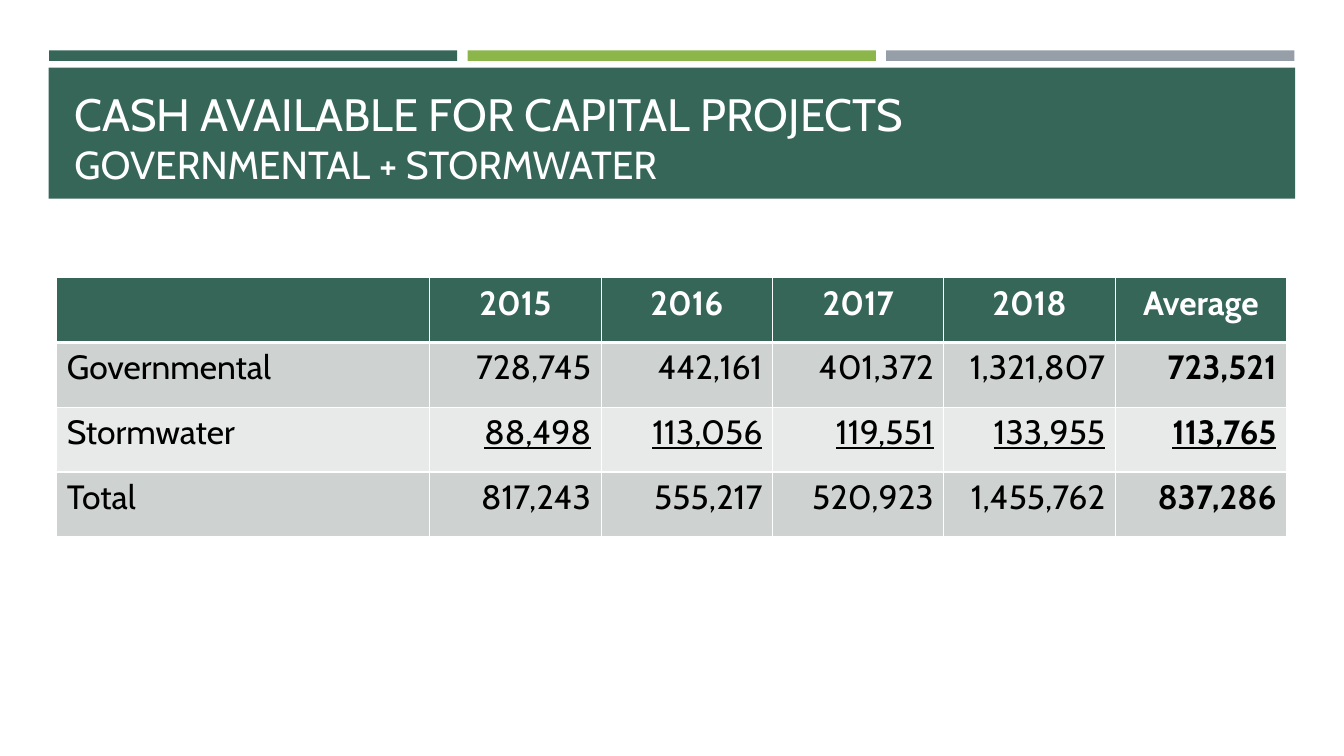
"""Build the slide on cash available for capital projects."""
from lxml import etree
from pptx import Presentation
from pptx.dml.color import RGBColor
from pptx.enum import shapes, text
from pptx.oxml import ns
from pptx.util import Pt

GREEN, LIME, GRAY, WHITE, BLACK = "366658", "8CB64A", "969FA7", "FFFFFF", "000000"
ROW_FILLS = [GREEN, "CED3D1", "E8EAEA", "CED3D1"]
ROWS = [
    ["", "2015", "2016", "2017", "2018", "Average"],
    ["Governmental", "728,745", "442,161", "401,372", "1,321,807", "723,521"],
    ["Stormwater", "88,498", "113,056", "119,551", "133,955", "113,765"],
    ["Total", "817,243", "555,217", "520,923", "1,455,762", "837,286"],
]


def paint(fill, color):
    fill.solid()
    fill.fore_color.rgb = RGBColor.from_string(color)


def add_border(cell, side, width):
    properties = cell._tc.get_or_add_tcPr()
    line = etree.SubElement(properties, ns.qn(f"a:ln{side}"), w=str(Pt(width)))
    solid = etree.SubElement(line, ns.qn("a:solidFill"))
    etree.SubElement(solid, ns.qn("a:srgbClr"), val=WHITE)


deck = Presentation()
deck.slide_width, deck.slide_height = Pt(960), Pt(540)
page = deck.slides.add_slide(deck.slide_layouts[5])

bars = [(35 + 299 * i, 36, 291.6, 7.5, color) for i, color in enumerate([GREEN, LIME, GRAY])]
title_band = (34.8, 48.4, 890.4, 93.6, GREEN)
for left, top, width, height, color in bars + [title_band]:
    band = page.shapes.add_shape(
        shapes.MSO_SHAPE.RECTANGLE, Pt(left), Pt(top), Pt(width), Pt(height))
    paint(band.fill, color)
    band.line.fill.background()
    band.shadow.inherit = False

title = page.shapes.title
band.element.addnext(title.element)
title.left, title.top, title.width, title.height = Pt(46), Pt(55.4), Pt(868.4), Pt(80)
frame = title.text_frame
frame.word_wrap = True
frame.auto_size = text.MSO_AUTO_SIZE.NONE
frame.vertical_anchor = text.MSO_ANCHOR.BOTTOM
frame.margin_bottom = Pt(1.5)
para = frame.paragraphs[0]
para.alignment = text.PP_ALIGN.LEFT
para.line_spacing = 1.0
para.font.name = "Cabin"
paint(para.font.fill, WHITE)
for wording, size in [("CASH AVAILABLE FOR CAPITAL PROJECTS", 32.4),
                      ("GOVERNMENTAL + STORMWATER", 27.9)]:
    if para.runs:
        para.add_line_break()
    span = para.add_run()
    span.text = wording
    span.font.size = Pt(size)

table = page.shapes.add_table(
    len(ROWS), len(ROWS[0]), Pt(40.6), Pt(198.3), Pt(878.4), Pt(185.2)).table
for index, column in enumerate(table.columns):
    column.width = Pt(122.4 if index else 266.4)
for row_index, values in enumerate(ROWS):
    header = row_index == 0
    for column_index, value in enumerate(values):
        cell = table.cell(row_index, column_index)
        for side in "LRTB":
            under_header = (row_index, side) in [(0, "B"), (1, "T")]
            add_border(cell, side, 3 if under_header else 1)
        paint(cell.fill, ROW_FILLS[row_index])
        cell.text = value
        para = cell.text_frame.paragraphs[0]
        if header:
            para.alignment = text.PP_ALIGN.CENTER
        elif column_index:
            para.alignment = text.PP_ALIGN.RIGHT
        para.font.name = "Cabin"
        para.font.size = Pt(24)
        para.font.bold = header or values[0] != "" and column_index == len(values) - 1
        para.font.underline = values[0] == "Stormwater" and column_index > 0
        paint(para.font.fill, WHITE if header else BLACK)

deck.save("out.pptx")
